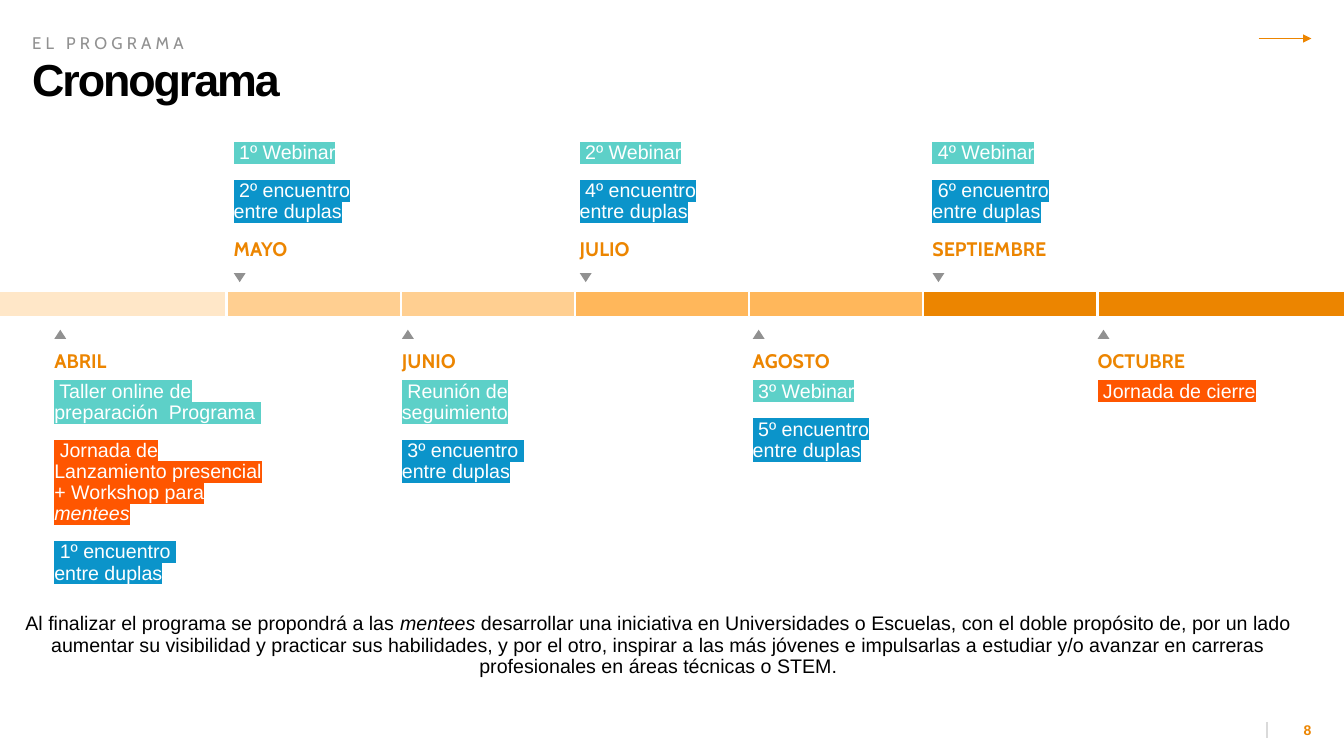
from dataclasses import dataclass

import pptx
import pptx.dml.color
import pptx.enum.shapes
import pptx.enum.text
import pptx.oxml.ns
import pptx.oxml.xmlchemy
import pptx.util
from lxml import etree
from pptx.util import Cm

COLORS = {
    "orange": "EC8500", "gray": "919191", "divider": "DADADA", "black": "000000",
    "white": "FFFFFF", "teal": "5DD0C8", "red": "FF5600", "blue": "0B94CA",
    "april": "FFE7C8", "spring": "FFCF91", "summer": "FFB75B",
}
ANCHOR = pptx.enum.text.MSO_ANCHOR
ALIGN = pptx.enum.text.PP_ALIGN
SHAPE = pptx.enum.shapes.MSO_SHAPE


@dataclass(frozen=True)
class Style:
    size: float
    font: str
    color: str
    bold: bool = False
    spacing: float = 0


@dataclass(frozen=True)
class Span:
    text: str
    italic: bool = False
    break_after: bool = False


@dataclass(frozen=True)
class Activity:
    highlight: str
    spans: tuple[Span, ...]


@dataclass(frozen=True)
class Month:
    name: str
    left: float
    width: float
    above: bool
    activities: tuple[Activity, ...]


MONTH_STYLE = Style(14, "Cabin", "orange", bold=True)
ACTIVITY_STYLE = Style(14, "Arial", "white")


def activity(highlight: str, text: str) -> Activity:
    return Activity(highlight, (Span(text),))


def broken_meeting(number: int) -> Activity:
    return Activity("blue", (Span(f" {number}º encuentro ", break_after=True),
                             Span("entre duplas")))


def webinar_month(name: str, left: float, width: float, above: bool,
                  webinar: int, meeting: int) -> Month:
    return Month(name, left, width, above, (
        activity("teal", f" {webinar}º Webinar"),
        activity("blue", f" {meeting}º encuentro entre duplas")))


MONTHS = (
    Month("ABRIL", 1.37, 5.44, False, (
        activity("teal", " Taller online de preparación  Programa "),
        Activity("red", (Span(" Jornada de Lanzamiento presencial + Workshop para "),
                         Span("mentees", italic=True))),
        broken_meeting(1))),
    webinar_month("MAYO", 5.89, 3.91, True, 1, 2),
    Month("JUNIO", 10.13, 5.44, False, (
        activity("teal", " Reunión de seguimiento"), broken_meeting(3))),
    webinar_month("JULIO", 14.61, 3.91, True, 2, 4),
    webinar_month("AGOSTO", 18.97, 4.01, False, 3, 5),
    webinar_month("SEPTIEMBRE", 23.5, 3.91, True, 4, 6),
    Month("OCTUBRE", 27.66, 4.27, False, (activity("red", " Jornada de cierre"),)),
)
CLOSING = (
    Span("Al finalizar el programa se propondrá a las "),
    Span("mentees", italic=True),
    Span(" desarrollar una iniciativa en Universidades o Escuelas, con el doble propósito "
         "de, por un lado aumentar su visibilidad y practicar sus habilidades, y por el otro, "
         "inspirar a las más jóvenes e impulsarlas a estudiar y/o avanzar en carreras "
         "profesionales en áreas técnicas o STEM."),
)


def rgb(color: str) -> pptx.dml.color.RGBColor:
    return pptx.dml.color.RGBColor.from_string(COLORS[color])


def place(shape, left: float, top: float, width: float, height: float) -> None:
    shape.left, shape.top, shape.width, shape.height = map(Cm, (left, top, width, height))


def prepare_frame(shape, anchor) -> None:
    frame = shape.text_frame
    frame.word_wrap = True
    frame.auto_size = pptx.enum.text.MSO_AUTO_SIZE.NONE
    frame.vertical_anchor = anchor
    frame.margin_left = frame.margin_top = frame.margin_right = frame.margin_bottom = 0


def write(paragraph, spans: tuple[Span, ...], style: Style, align=ALIGN.LEFT,
          line_spacing: float = 0.9, after: float = 6, highlight: str = "") -> None:
    paragraph.alignment = align
    paragraph.line_spacing = line_spacing
    paragraph.space_before = pptx.util.Pt(0)
    paragraph.space_after = pptx.util.Pt(after)
    for span in spans:
        run = paragraph.add_run()
        run.text = span.text
        font = run.font
        font.size = pptx.util.Pt(style.size)
        font.name = style.font
        font.bold = style.bold
        font.italic = span.italic
        font.color.rgb = rgb(style.color)
        properties = run._r.get_or_add_rPr()
        if style.spacing:
            properties.set("spc", str(int(style.spacing * 100)))
        if highlight:
            mark = etree.Element(pptx.oxml.ns.qn("a:highlight"))
            etree.SubElement(mark, pptx.oxml.ns.qn("a:srgbClr"), val=COLORS[highlight])
            properties.find(pptx.oxml.ns.qn("a:solidFill")).addnext(mark)
        if span.break_after:
            paragraph.add_line_break()


def add_line(slide, start: tuple[float, float], end: tuple[float, float],
             color: str, width: float, arrow: bool = False) -> None:
    connector = slide.shapes.add_connector(
        pptx.enum.shapes.MSO_CONNECTOR.STRAIGHT, *map(Cm, start + end))
    connector.line.color.rgb = rgb(color)
    connector.line.width = pptx.util.Pt(width)
    if arrow:
        etree.SubElement(connector.line._get_or_add_ln(),
                         pptx.oxml.ns.qn("a:tailEnd"), type="triangle")
    etree.SubElement(connector._element.spPr, pptx.oxml.ns.qn("a:effectLst"))


def add_filled(shapes, kind, box: tuple[float, float, float, float], color: str):
    shape = shapes.add_shape(kind, *map(Cm, box))
    shape.shadow.inherit = False
    shape.fill.solid()
    shape.fill.fore_color.rgb = rgb(color)
    shape.line.fill.background()
    return shape


def add_bar(slide) -> None:
    first_edge, pitch, gap = 5.72, 4.39, 0.02
    edges = [-0.2] + [first_edge + pitch * step for step in range(6)] + [34.24]
    colors = ("april", "spring", "spring", "summer", "summer", "orange", "orange")
    group = slide.shapes.add_group_shape()
    for color, left, right in zip(colors, edges, edges[1:]):
        segment = add_filled(group.shapes, SHAPE.RECTANGLE,
                             (left, 7.34, right - left - gap, 0.64), color)
        segment.line.color.rgb = rgb("white")
        segment.line.width = pptx.util.Pt(1)


def add_month(slide, month: Month) -> None:
    marker = add_filled(slide.shapes, SHAPE.ISOSCELES_TRIANGLE,
                        (month.left, 6.88 if month.above else 8.31, 0.3, 0.23), "gray")
    marker.rotation = 180 if month.above else 0
    box = slide.shapes.add_textbox(Cm(month.left), Cm(4.95 if month.above else 8.86),
                                   Cm(month.width), Cm(1.63))
    prepare_frame(box, ANCHOR.BOTTOM if month.above else ANCHOR.TOP)
    name = Activity("", (Span(month.name),))
    entries = (*month.activities, name) if month.above else (name, *month.activities)
    for index, entry in enumerate(entries):
        frame = box.text_frame
        paragraph = frame.add_paragraph() if index else frame.paragraphs[0]
        write(paragraph, entry.spans, ACTIVITY_STYLE if entry.highlight else MONTH_STYLE,
              after=12 if month.above or entry.highlight else 6, highlight=entry.highlight)


def main() -> None:
    presentation = pptx.Presentation()
    presentation.slide_width, presentation.slide_height = Cm(33.87), Cm(19.05)
    slide = presentation.slides.add_slide(presentation.slide_layouts.get_by_name("Comparison"))
    title, section, first_content, closing, second_content = slide.placeholders
    for unused in (first_content, second_content):
        unused._element.getparent().remove(unused._element)

    place(section, 0.81, 0.66, 9.53, 0.69)
    prepare_frame(section, ANCHOR.BOTTOM)
    write(section.text_frame.paragraphs[0], (Span("EL PROGRAMA"),),
          Style(12, "Cabin", "gray", spacing=3))
    place(title, 0.81, 1.5, 9.53, 3.68)
    prepare_frame(title, ANCHOR.TOP)
    write(title.text_frame.paragraphs[0], (Span("Cronograma"),),
          Style(32, "Arial", "black", bold=True, spacing=-1.5), line_spacing=0.85, after=0)
    place(closing, 0.48, 15.47, 32.23, 2.11)
    prepare_frame(closing, ANCHOR.TOP)
    write(closing.text_frame.paragraphs[0], CLOSING, Style(14, "Arial", "black"), ALIGN.CENTER)

    add_bar(slide)
    for month in MONTHS:
        add_month(slide, month)

    add_line(slide, (31.72, 0.97), (33.05, 0.97), "orange", 1.25, arrow=True)
    add_line(slide, (31.93, 18.19), (31.93, 18.59), "divider", 1)
    page_number = slide.shapes.add_textbox(Cm(25.43), Cm(18.16), Cm(7.62), Cm(0.48))
    prepare_frame(page_number, ANCHOR.MIDDLE)
    write(page_number.text_frame.paragraphs[0], (Span("8"),),
          Style(10, "Arial", "orange", bold=True), ALIGN.RIGHT, line_spacing=1, after=0)
    presentation.save("out.pptx")


if __name__ == "__main__":
    main()
